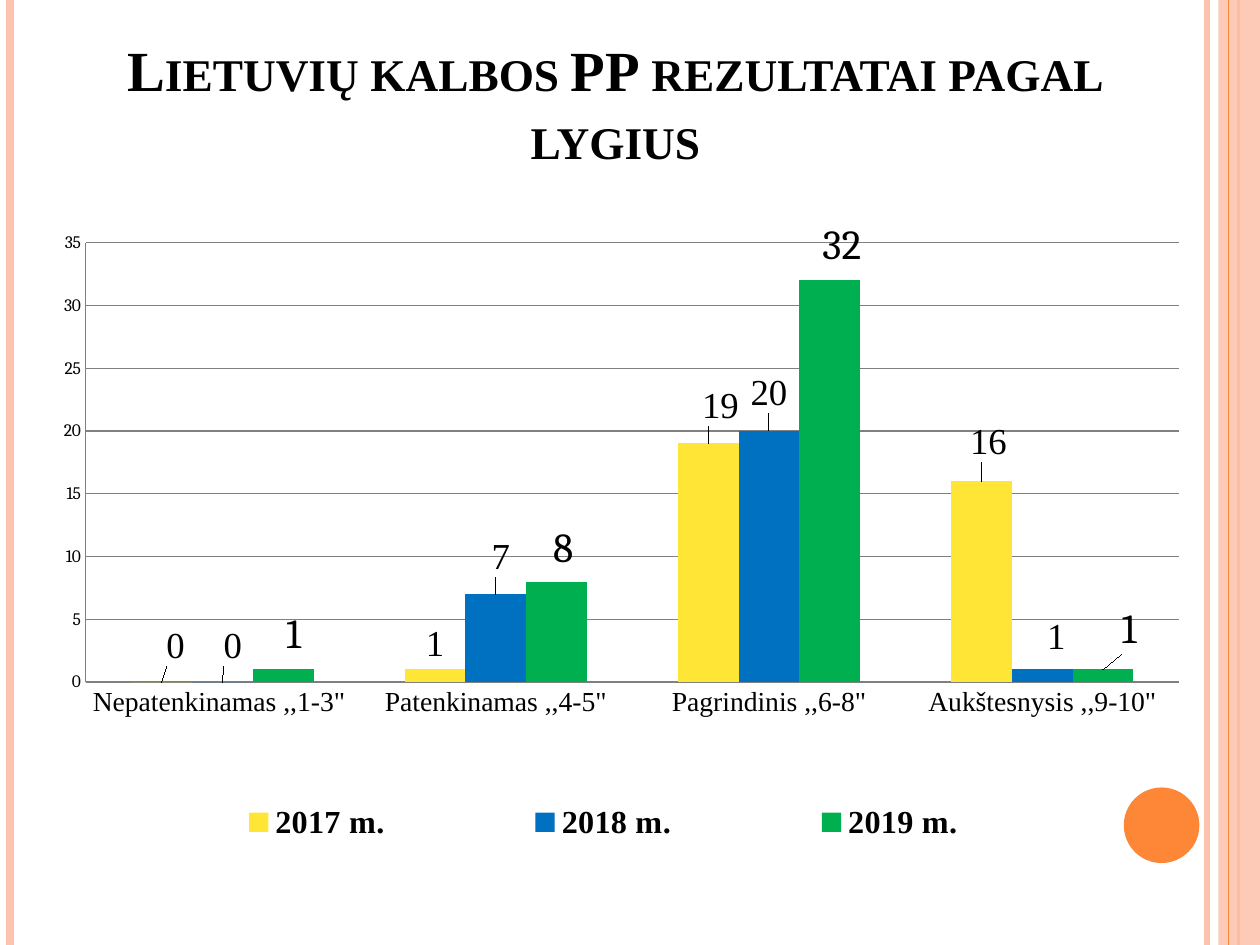
from lxml.etree import SubElement
from pptx import Presentation
from pptx.chart.data import CategoryChartData
from pptx.dml.color import RGBColor
from pptx.enum.chart import XL_CHART_TYPE, XL_LABEL_POSITION, XL_LEGEND_POSITION, XL_TICK_MARK
from pptx.enum.shapes import MSO_CONNECTOR, MSO_SHAPE
from pptx.enum.text import MSO_ANCHOR, PP_ALIGN
from pptx.oxml import parse_xml
from pptx.oxml.ns import nsdecls, qn
from pptx.util import Pt

# Content
TITLE = "Lietuvių kalbos PP rezultatai pagal lygius"
LEVELS = ['Nepatenkinamas ,,1-3" ', 'Patenkinamas ,,4-5"', 'Pagrindinis ,,6-8"', 'Aukštesnysis ,,9-10"']
# Each year: values and the shift of each label (points right, points down)
YEARS = [
    dict(name="2017 m.", values=(0, 1, 19, 16), color="FFE636", size=21, font="Times New Roman",
         shifts=((8, -6), None, (7, -7), (4, -8))),
    dict(name="2018 m.", values=(0, 7, 20, 1), color="0070C0", size=21, font="Times New Roman",
         shifts=((6, -6), (3, -7), (0, -7), (8, -4))),
    dict(name="2019 m.", values=(1, 8, 32, 1), color="00B050", size=23.7, font="Cambria",
         shifts=((6, -3), (4, -2), (7, -3), (15, -6))),
]

THEME = dict(
    text="000000", pale="FEC3AE", accent="FE8637", grid="808080",
    serif="Times New Roman", body="Cambria",
    title=32.4, axis=10, category=15.8, legend=18.4,
)

# Layout, in points
SLIDE_W, SLIDE_H = 720, 540
STRIPES = [(689.8, "pale", 3), (5.8, "pale", 4.5), (707.8, "accent", 1.5)]  # x, colour, width
BAND_STRIPE = (702, "accent", 0.75)
BAND_X = 696.2
DISC = (642.2, 450, 43.2, 43.2)
TITLE_BOX = (54, 12.2, 595.4, 89.3)
CHART_BOX = (15.8, 126.7, 664.6, 365)
PLOT = (0.05, 0.03, 0.94, 0.69)
LEGEND = (0.07, 0.89, 0.85, 0.1)


def rgb(value):
    return RGBColor.from_string(value)


def points(box):
    return [Pt(length) for length in box]


def set_font(font, size, name, bold=False):
    font.size, font.name, font.bold = Pt(size), name, bold
    font.color.rgb = rgb(THEME["text"])


def add_stripe(slide, x, color, width):
    stripe = slide.shapes.add_connector(MSO_CONNECTOR.STRAIGHT, Pt(x), 0, Pt(x), Pt(SLIDE_H))
    stripe.line.color.rgb = rgb(THEME[color])
    stripe.line.width = Pt(width)
    SubElement(stripe._element.spPr, qn("a:effectLst"))


def add_plain(slide, preset, box, color):
    plain = slide.shapes.add_shape(preset, *points(box))
    plain.shadow.inherit = False
    plain.fill.solid()
    plain.fill.fore_color.rgb = rgb(THEME[color])
    plain.line.fill.background()
    return plain


def manual_layout(x, y, w=None, h=None, inner=False):
    target = '<c:layoutTarget val="inner"/>' if inner else ""
    modes = '<c:xMode val="edge"/><c:yMode val="edge"/>' if w else ""
    extent = f'<c:w val="{w}"/><c:h val="{h}"/>' if w else ""
    return parse_xml(f'<c:layout {nsdecls("c")}><c:manualLayout>{target}{modes}'
                     f'<c:x val="{x:.4f}"/><c:y val="{y:.4f}"/>{extent}</c:manualLayout></c:layout>')


def replace_layout(parent, layout, index):
    for old in parent.findall(qn("c:layout")):
        parent.remove(old)
    parent.insert(index, layout)


def add_decoration(slide):
    for stripe in STRIPES:
        add_stripe(slide, *stripe)
    band = add_plain(slide, MSO_SHAPE.RECTANGLE, (BAND_X, 0, SLIDE_W - BAND_X, SLIDE_H), "pale")
    band_color = band._element.spPr.find(qn("a:solidFill"))[0]
    SubElement(band_color, qn("a:alpha"), val="87000")
    add_stripe(slide, *BAND_STRIPE)
    add_plain(slide, MSO_SHAPE.OVAL, DISC, "accent")


def add_title(slide):
    frame = slide.shapes.add_textbox(*points(TITLE_BOX)).text_frame
    frame.word_wrap = True
    frame.vertical_anchor = MSO_ANCHOR.BOTTOM
    paragraph = frame.paragraphs[0]
    paragraph.alignment = PP_ALIGN.CENTER
    run = paragraph.add_run()
    run.text = TITLE
    set_font(run.font, THEME["title"], THEME["serif"], bold=True)
    run._r.get_or_add_rPr().set("cap", "small")


def style_series(series, year):
    series.format.fill.solid()
    series.format.fill.fore_color.rgb = rgb(year["color"])
    labels = series.data_labels
    labels.show_value = True
    labels.position = XL_LABEL_POSITION.OUTSIDE_END
    set_font(labels.font, year["size"], year["font"])
    for index, shift in enumerate(year["shifts"]):
        if shift is None:
            continue
        label = series.points[index].data_label
        label.position = XL_LABEL_POSITION.OUTSIDE_END
        set_font(label.font, year["size"], year["font"])
        element = series._element.find(qn("c:dLbls")).findall(qn("c:dLbl"))[-1]
        right, down = shift
        replace_layout(element, manual_layout(right / CHART_BOX[2], down / CHART_BOX[3]), 1)


def add_results_chart(slide):
    data = CategoryChartData()
    data.categories = LEVELS
    for year in YEARS:
        data.add_series(year["name"], year["values"])
    chart = slide.shapes.add_chart(XL_CHART_TYPE.COLUMN_CLUSTERED, *points(CHART_BOX), data).chart
    chart.has_title = False
    set_font(chart.font, THEME["axis"], THEME["body"])

    plot = chart.plots[0]
    plot.vary_by_categories = False
    plot.gap_width, plot.overlap = 150, 0
    for series, year in zip(plot.series, YEARS):
        style_series(series, year)
    replace_layout(chart._chartSpace.chart.plotArea, manual_layout(*PLOT, inner=True), 0)

    # Axes
    levels, counts = chart.category_axis, chart.value_axis
    counts.minimum_scale, counts.maximum_scale, counts.major_unit = 0, 35, 5
    counts.has_major_gridlines = True
    set_font(levels.tick_labels.font, THEME["category"], THEME["serif"])
    set_font(counts.tick_labels.font, THEME["axis"], THEME["body"])
    for axis in (levels, counts):
        axis.major_tick_mark = axis.minor_tick_mark = XL_TICK_MARK.NONE
    for line in (levels.format.line, counts.format.line, counts.major_gridlines.format.line):
        line.color.rgb = rgb(THEME["grid"])
        line.width = Pt(0.75)

    # Legend
    chart.has_legend = True
    legend = chart.legend
    legend.position = XL_LEGEND_POSITION.RIGHT
    legend.include_in_layout = False
    set_font(legend.font, THEME["legend"], THEME["serif"], bold=True)
    replace_layout(legend._element, manual_layout(*LEGEND), 1)


def main():
    deck = Presentation()
    deck.slide_width, deck.slide_height = Pt(SLIDE_W), Pt(SLIDE_H)
    slide = deck.slides.add_slide(deck.slide_layouts[6])
    add_decoration(slide)
    add_title(slide)
    add_results_chart(slide)
    deck.save("out.pptx")


if __name__ == "__main__":
    main()
